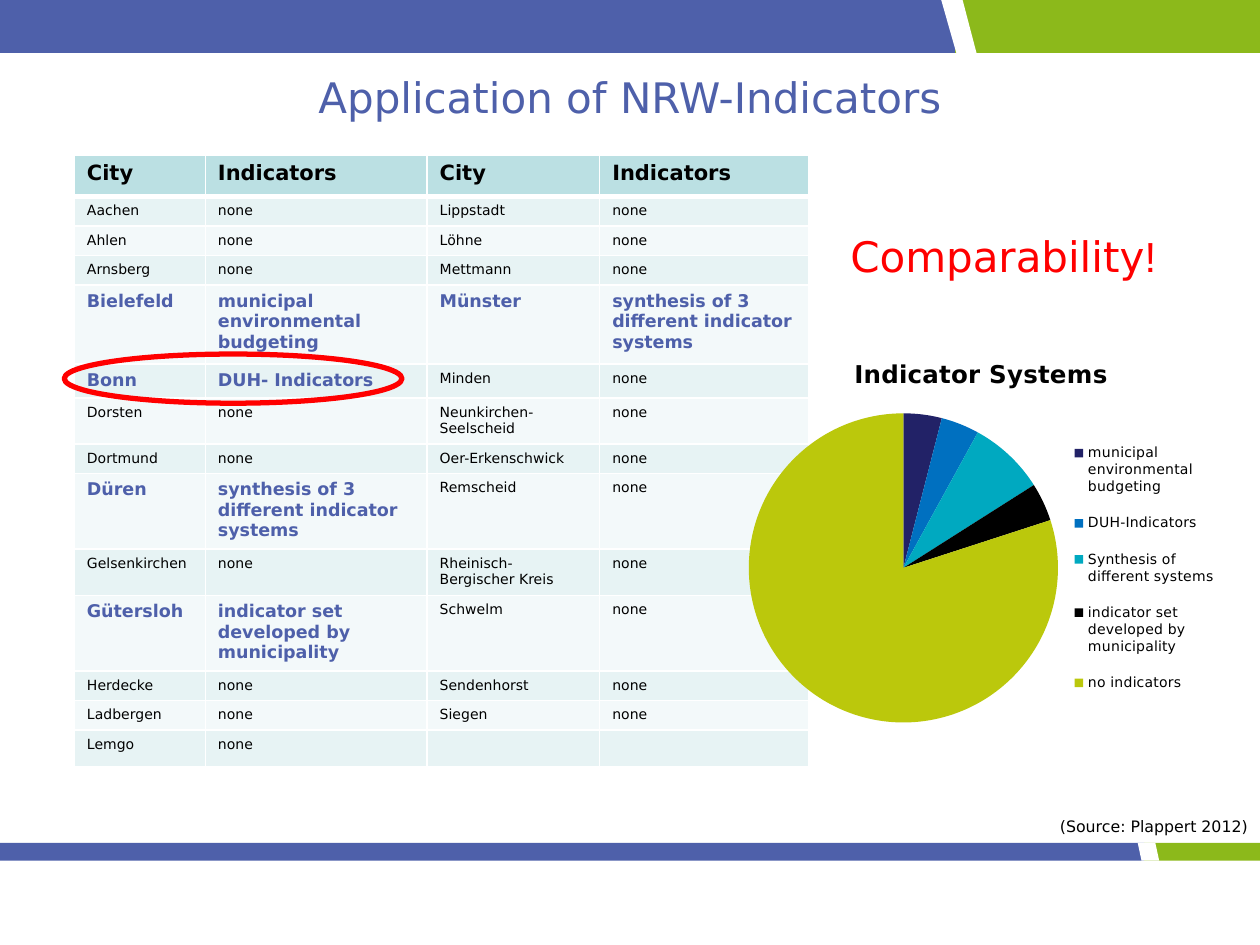
from typing import NamedTuple

from lxml import etree
from pptx import Presentation
from pptx.chart.data import CategoryChartData
from pptx.dml.color import RGBColor
from pptx.enum.chart import XL_CHART_TYPE, XL_LEGEND_POSITION
from pptx.enum.shapes import MSO_SHAPE
from pptx.enum.text import PP_ALIGN
from pptx.oxml.ns import qn
from pptx.util import Inches, Pt

PIE = XL_CHART_TYPE.PIE
LEGEND_RIGHT = XL_LEGEND_POSITION.RIGHT
RECTANGLE, OVAL = MSO_SHAPE.RECTANGLE, MSO_SHAPE.OVAL
LEFT, CENTER, RIGHT = PP_ALIGN.LEFT, PP_ALIGN.CENTER, PP_ALIGN.RIGHT

FONT = "DejaVu Sans"
COLORS = {
    "blue": "4E60AA", "green": "8CB91B", "white": "FFFFFF", "black": "000000",
    "red": "FF0000", "header": "BBE0E3", "odd_row": "E7F3F4", "even_row": "F3F9FA",
}
SLIDE_WIDTH = 10

BUDGETING = "municipal environmental budgeting"
SYNTHESIS = "synthesis of 3 different indicator systems"
OWN_SET = "indicator set developed by municipality"
COLUMN_WIDTHS = [1.04, 1.76, 1.37, 1.66]


class CityRow(NamedTuple):
    height: float
    left_city: str
    left_indicators: str = "none"
    right_city: str = ""
    right_indicators: str = "none"


CITY_ROWS = [
    CityRow(0.23, "Aachen", right_city="Lippstadt"),
    CityRow(0.23, "Ahlen", right_city="Löhne"),
    CityRow(0.23, "Arnsberg", right_city="Mettmann"),
    CityRow(0.63, "Bielefeld", BUDGETING, "Münster", SYNTHESIS),
    CityRow(0.26, "Bonn", "DUH- Indicators", "Minden"),
    CityRow(0.36, "Dorsten", right_city="Neunkirchen-Seelscheid"),
    CityRow(0.23, "Dortmund", right_city="Oer-Erkenschwick"),
    CityRow(0.59, "Düren", SYNTHESIS, "Remscheid"),
    CityRow(0.36, "Gelsenkirchen", right_city="Rheinisch-Bergischer Kreis"),
    CityRow(0.58, "Gütersloh", OWN_SET, "Schwelm"),
    CityRow(0.23, "Herdecke", right_city="Sendenhorst"),
    CityRow(0.23, "Ladbergen", right_city="Siegen"),
    CityRow(0.29, "Lemgo", right_indicators=""),
]


class Share(NamedTuple):
    system: str
    percent: int
    color: str


SHARES = [
    Share(BUDGETING, 4, "222267"),
    Share("DUH-Indicators", 4, "0070C0"),
    Share("Synthesis of different systems", 8, "00A9C0"),
    Share(OWN_SET, 4, "000000"),
    Share("no indicators", 80, "BBC80C"),
]


class Band(NamedTuple):
    """A blue and green stripe, parted by a slanted white gap."""
    top: float
    height: float
    split: float
    gap_top: tuple[float, float]
    gap_bottom: tuple[float, float]


BANDS = [
    Band(0, 0.42, 7.58, (7.47, 7.64), (7.59, 7.75)),
    Band(6.69, 0.14, 9.08, (9.03, 9.17), (9.06, 9.2)),
]


def rgb(color: str) -> RGBColor:
    return RGBColor.from_string(COLORS.get(color, color))


def add_run(paragraph, text: str, size: float, color: str,
            bold: bool = False, font: str = FONT) -> None:
    run = paragraph.add_run()
    run.text = text
    run.font.name, run.font.size, run.font.bold = font, Pt(size), bold
    run.font.color.rgb = rgb(color)


def add_label(slide, left: float, top: float, width: float, height: float, align):
    """Add an empty text box and return its paragraph."""
    frame = slide.shapes.add_textbox(
        Inches(left), Inches(top), Inches(width), Inches(height)).text_frame
    frame.word_wrap = True
    frame.paragraphs[0].alignment = align
    return frame.paragraphs[0]


def fill_plain(shape, color: str) -> None:
    shape.shadow.inherit = False
    shape.fill.solid()
    shape.fill.fore_color.rgb = rgb(color)
    shape.line.fill.background()


def draw_band(slide, band: Band) -> None:
    for left, right, color in [(0, band.split, "blue"), (band.split, SLIDE_WIDTH, "green")]:
        stripe = slide.shapes.add_shape(
            RECTANGLE, Inches(left), Inches(band.top), Inches(right - left), Inches(band.height))
        fill_plain(stripe, color)
    bottom = band.top + band.height
    corners = [(band.gap_top[0], band.top), (band.gap_top[1], band.top),
               (band.gap_bottom[1], bottom), (band.gap_bottom[0], bottom)]
    points = [(Inches(x), Inches(y)) for x, y in corners]
    builder = slide.shapes.build_freeform(*points[0])
    builder.add_line_segments(points[1:], close=True)
    fill_plain(builder.convert_to_shape(), "white")


def style_cell(cell, fill: str, top: float, bottom: float) -> None:
    """Fill a cell and give it white borders, with widths in points."""
    cell.fill.solid()
    cell.fill.fore_color.rgb = rgb(fill)
    properties = cell._tc.get_or_add_tcPr()
    sides = [("a:lnL", 1), ("a:lnR", 1), ("a:lnT", top), ("a:lnB", bottom)]
    for index, (tag, width) in enumerate(sides):
        border = etree.Element(qn(tag), w=str(Pt(width)))
        solid = etree.SubElement(border, qn("a:solidFill"))
        etree.SubElement(solid, qn("a:srgbClr"), val=COLORS["white"])
        properties.insert(index, border)


def draw_city_table(slide) -> None:
    heights = [0.33] + [row.height for row in CITY_ROWS]
    table = slide.shapes.add_table(
        len(heights), len(COLUMN_WIDTHS), Inches(0.59), Inches(1.23),
        Inches(sum(COLUMN_WIDTHS)), Inches(sum(heights))).table
    for column, width in zip(table.columns, COLUMN_WIDTHS):
        column.width = Inches(width)
    for row, height in zip(table.rows, heights):
        row.height = Inches(height)

    for index, heading in enumerate(["City", "Indicators"] * 2):
        cell = table.cell(0, index)
        style_cell(cell, "header", 1, 3)
        add_run(cell.text_frame.paragraphs[0], heading, 12, "black", True)

    for row_index, row in enumerate(CITY_ROWS, start=1):
        for index, text in enumerate(row[1:]):
            cell = table.cell(row_index, index)
            style_cell(cell, "odd_row" if row_index % 2 else "even_row",
                       3 if row_index == 1 else 1, 1)
            paragraph = cell.text_frame.paragraphs[0]
            indicators = row.left_indicators if index < 2 else row.right_indicators
            if not text:
                paragraph._p.get_or_add_endParaRPr().set("sz", "800")
            elif indicators == "none":
                add_run(paragraph, text, 8, "black")
            else:
                add_run(paragraph, text, 10, "blue", True)


def place_chart_part(part, index: int, **fractions: float) -> None:
    """Insert a manual layout, in fractions of the chart, as the part's child at index."""
    for old in part.findall(qn("c:layout")):
        part.remove(old)
    layout = etree.Element(qn("c:layout"))
    manual = etree.SubElement(layout, qn("c:manualLayout"))
    if part.tag == qn("c:plotArea"):
        etree.SubElement(manual, qn("c:layoutTarget"), val="inner")
    for mode in ("xMode", "yMode"):
        etree.SubElement(manual, qn(f"c:{mode}"), val="edge")
    for key, value in fractions.items():
        etree.SubElement(manual, qn(f"c:{key}"), val=str(value))
    part.insert(index, layout)


def draw_share_chart(slide) -> None:
    data = CategoryChartData()
    data.categories = [share.system for share in SHARES]
    data.add_series("Indicator Systems", [share.percent for share in SHARES])
    chart = slide.shapes.add_chart(
        PIE, Inches(5.47), Inches(2.57), Inches(4.25), Inches(3.23), data).chart
    chart.font.name, chart.font.size = "Arial", Pt(18)
    chart.font.color.rgb = rgb("black")

    chart.has_title = True
    add_run(chart.chart_title.text_frame.paragraphs[0], "Indicator Systems", 14, "black", True)
    chart.has_legend = True
    legend = chart.legend
    legend.position, legend.include_in_layout = LEGEND_RIGHT, False
    legend.font.name, legend.font.size = FONT, Pt(8)
    legend.font.color.rgb = rgb("black")

    plot = chart.plots[0]
    plot.vary_by_categories = True
    for index, share in enumerate(SHARES):
        wedge = plot.series[0].points[index].format
        wedge.fill.solid()
        wedge.fill.fore_color.rgb = rgb(share.color)
        wedge.line.fill.background()

    place_chart_part(chart.chart_title._element, 1, x=0.3, y=0.07)
    place_chart_part(legend._element, 1, x=0.71, y=0.25, w=0.28, h=0.7)
    plot_area = chart._chartSpace.find(".//" + qn("c:plotArea"))
    place_chart_part(plot_area, 0, x=0.11, y=0.22, w=0.58, h=0.76)


def main() -> None:
    presentation = Presentation()
    presentation.slide_width, presentation.slide_height = Inches(SLIDE_WIDTH), Inches(7.5)
    slide = presentation.slides.add_slide(presentation.slide_layouts[6])
    for band in BANDS:
        draw_band(slide, band)
    title = add_label(slide, 0.75, 0.52, 8.5, 0.75, CENTER)
    add_run(title, "Application of NRW-Indicators", 24, "blue")
    draw_city_table(slide)
    draw_share_chart(slide)
    source = add_label(slide, 5.35, 6.43, 4.65, 0.25, RIGHT)
    add_run(source, "(Source: Plappert 2012)", 9, "black")

    bonn_ring = slide.shapes.add_shape(
        OVAL, Inches(0.51), Inches(2.81), Inches(2.68), Inches(0.39))
    bonn_ring.shadow.inherit = False
    bonn_ring.fill.background()
    bonn_ring.line.color.rgb, bonn_ring.line.width = rgb("red"), Pt(3)

    remark = add_label(slide, 6.65, 1.78, 2.76, 0.5, LEFT)
    add_run(remark, "Comparability", 24, "red")
    add_run(remark, "!", 24, "red", font="Arial")
    presentation.save("out.pptx")


if __name__ == "__main__":
    main()
